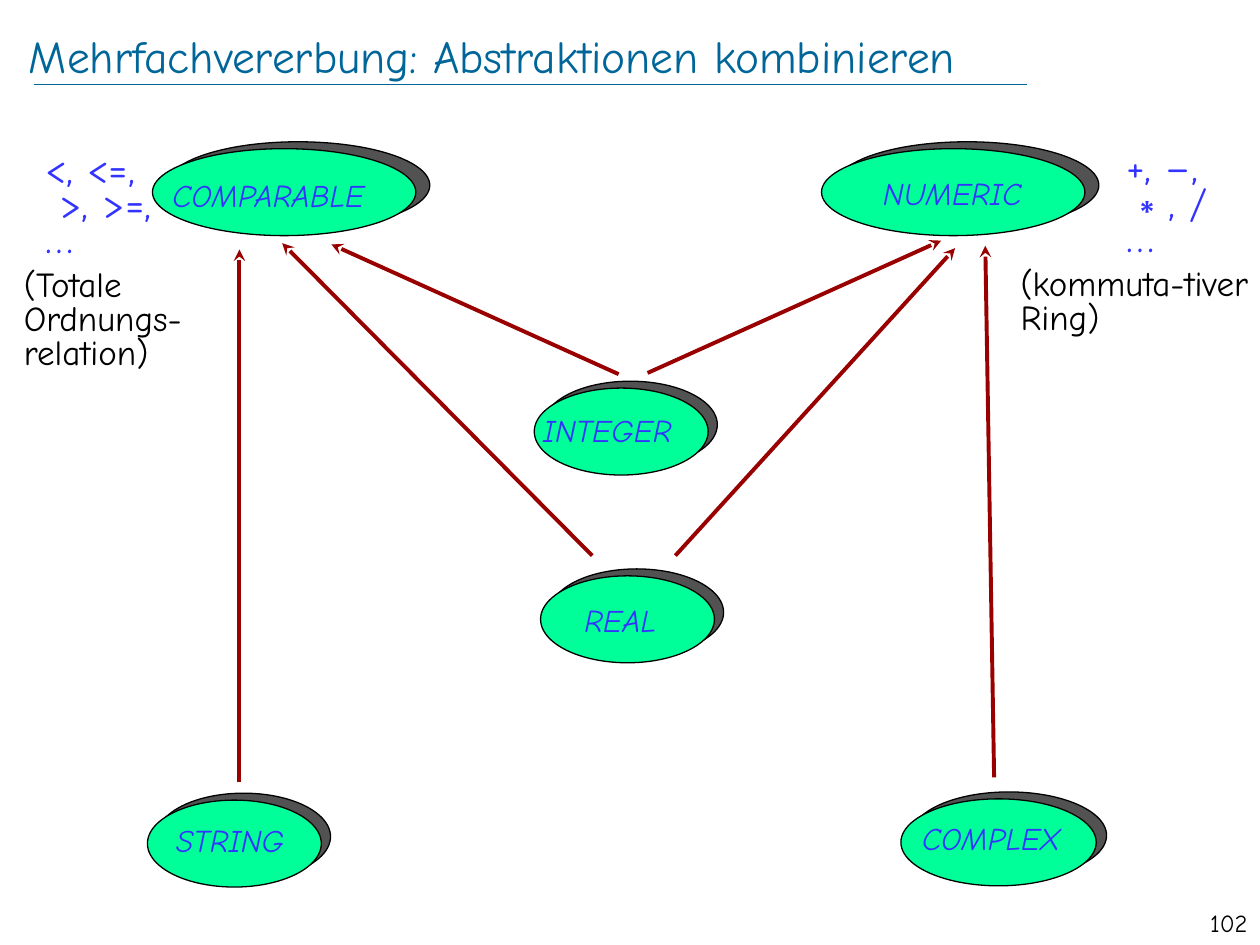
from lxml.etree import SubElement
from pptx import Presentation
from pptx.dml.color import RGBColor
from pptx.enum.shapes import MSO_CONNECTOR as Connector, MSO_SHAPE as Shape
from pptx.enum.text import MSO_ANCHOR as Anchor, PP_ALIGN as Align
from pptx.oxml.ns import qn
from pptx.util import Inches, Pt

COLUMNS, ROWS = 100, 75
CELL = Inches(10) / COLUMNS
FONT = "Comic Neue"
COLORS = {
    "title": "006699",
    "label": "3333FF",
    "class": "00FF99",
    "arrow": "990000",
    "black": "000000",
}
CLASS_HEIGHT = 6.9
DEPTH_SHARE = 0.053
DEPTH_RISE = 0.55

CLASSES = [
    ("COMPARABLE", (12.1, 11.8), 20.9, (12.7, 13.5), 20.5),
    ("REAL", (42.9, 45.7), 13.8, (45.4, 47.2), 9.5),
    ("INTEGER", (42.4, 30.8), 13.8, (42.1, 32.1), 14.9),
    ("COMPLEX", (71.5, 63.4), 15.5, (72.2, 64.5), 14.9),
    ("NUMERIC", (65.2, 11.8), 20.9, (69.1, 13.3), 15.7),
    ("STRING", (11.7, 63.5), 13.8, (13, 64.7), 15.2),
]
INHERITANCE = [
    ((49.1, 29.7), (26.3, 19.4)),
    ((51.4, 29.6), (74.7, 19.1)),
    ((53.6, 44.1), (75.8, 19.7)),
    ((47, 44.1), (22.4, 19.3)),
    ((19, 62.1), (19, 19.8)),
    ((78.9, 61.7), (78.2, 19.5)),
]
OPERATORS = [
    ([("<, <=,\n >, >=, …", FONT)], (2.6, 11.8, 13, 9.4)),
    ([("+, –, ", FONT), ("∗", "Arial"), (", / …", FONT)], (88.4, 11.7, 9.5, 9.4)),
]
PROPERTIES = [
    ("(Totale Ordnungs-relation)", (1.9, 21.5, 19, 8.1)),
    ("(kommuta-tiver Ring)", (81, 21.4, 19, 5.4)),
]


def grid(*cells):
    return [round(cell * CELL) for cell in cells]


def color(name):
    return RGBColor.from_string(COLORS[name])


def add_text(slide, content, box, size, ink="black", italic=None, align=Align.LEFT,
             anchor=Anchor.TOP, spacing=None, padded=True):
    frame = slide.shapes.add_textbox(*grid(*box)).text_frame
    frame.word_wrap = True
    frame.vertical_anchor = anchor
    if not padded:
        frame.margin_left = frame.margin_right = 0
        frame.margin_top = frame.margin_bottom = 0
    paragraph = frame.paragraphs[0]
    paragraph.alignment = align
    paragraph.line_spacing = spacing
    parts = [(content, FONT)] if isinstance(content, str) else content
    for words, typeface in parts:
        for number, line in enumerate(words.split("\n")):
            if number:
                paragraph.add_line_break()
            run = paragraph.add_run()
            run.text = line
            run.font.name = typeface
            run.font.size = Pt(size)
            run.font.italic = italic
            run.font.color.rgb = color(ink)


def add_ellipse(slide, left, top, width, fill, opacity=None):
    ellipse = slide.shapes.add_shape(Shape.OVAL, *grid(left, top, width, CLASS_HEIGHT))
    ellipse.shadow.inherit = False
    ellipse.fill.solid()
    ellipse.fill.fore_color.rgb = color(fill)
    ellipse.line.color.rgb = color("black")
    ellipse.line.width = Pt(0.75)
    if opacity:
        shade = ellipse.fill._xPr.find(".//" + qn("a:srgbClr"))
        SubElement(shade, qn("a:alpha"), val=str(opacity * 1000))


def add_class(slide, corner, width):
    left, top = corner
    add_ellipse(slide, left + width * DEPTH_SHARE, top - DEPTH_RISE, width, "black", opacity=68)
    add_ellipse(slide, left, top, width, "class")


def add_line(slide, start, end, ink, weight, head=None):
    line = slide.shapes.add_connector(Connector.STRAIGHT, *grid(*start, *end))
    line.line.color.rgb = color(ink)
    line.line.width = Pt(weight)
    if head:
        SubElement(line.line._get_or_add_ln(), qn("a:tailEnd"), type=head)
    SubElement(line._element.spPr, qn("a:effectLst"))


def main():
    deck = Presentation()
    deck.slide_width, deck.slide_height = grid(COLUMNS, ROWS)
    slide = deck.slides.add_slide(deck.slide_layouts[6])

    add_line(slide, (2.7, 6.7), (81.5, 6.7), "title", 0.25)
    add_text(slide, "102", (94.5, 71.6, 5.5, 2.4), 14, align=Align.RIGHT)
    for _, corner, width, _, _ in CLASSES:
        add_class(slide, corner, width)
    add_text(slide, "Mehrfachvererbung: Abstraktionen kombinieren", (2.3, 1.6, 93.1, 5.5), 26,
             ink="title", anchor=Anchor.MIDDLE, padded=False)
    for name, _, _, label_corner, label_width in CLASSES:
        add_text(slide, name, (*label_corner, label_width, 4), 18, ink="label", italic=True)
    for heir, parent in INHERITANCE:
        add_line(slide, heir, parent, "arrow", 2.25, head="stealth")
    for symbols, box in OPERATORS:
        add_text(slide, symbols, box, 24, ink="label", spacing=0.7)
    for meaning, box in PROPERTIES:
        add_text(slide, meaning, box, 20, spacing=0.8, padded=False)

    deck.save("out.pptx")


if __name__ == "__main__":
    main()
